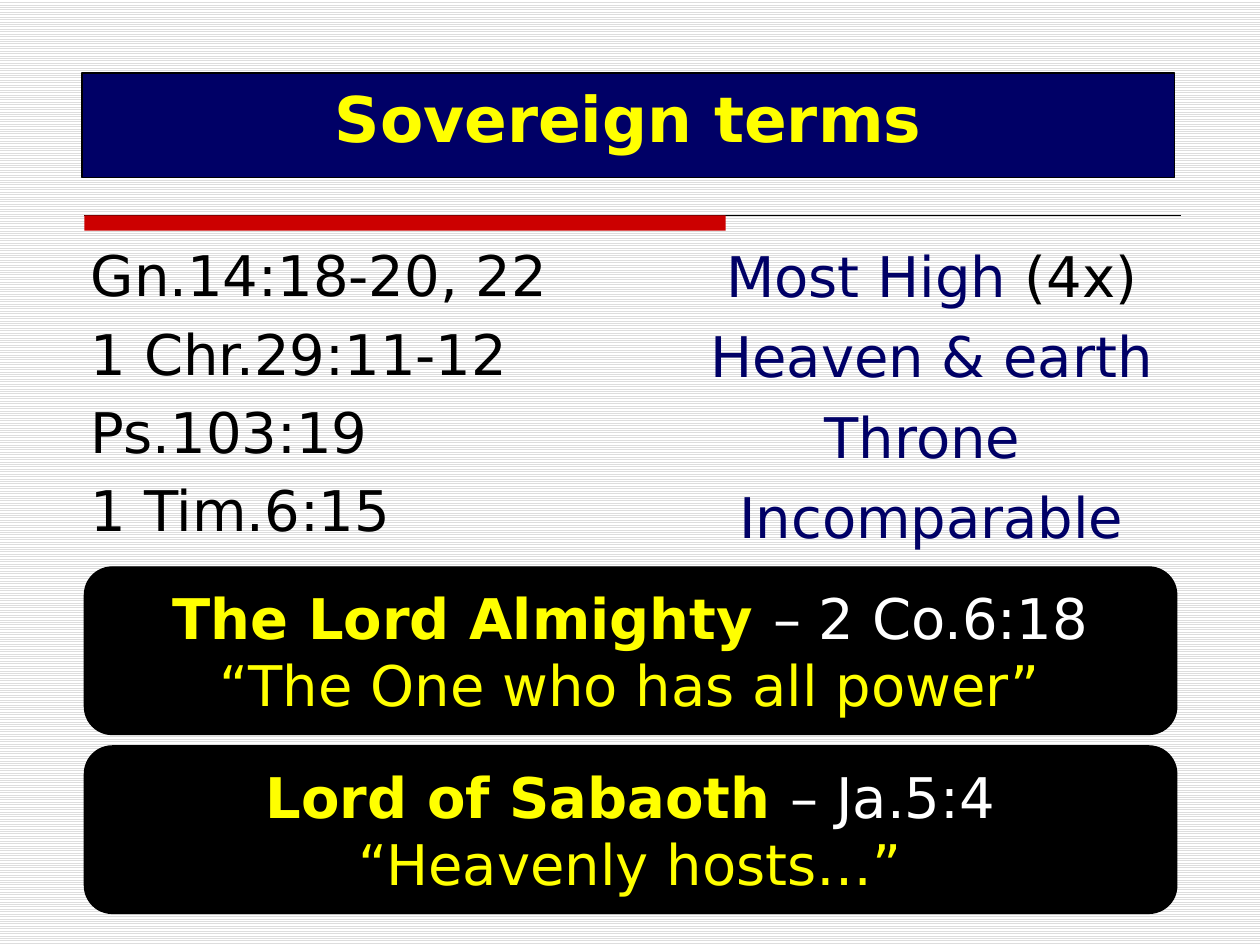
from pptx import Presentation
from pptx.dml.color import RGBColor
from pptx.enum.dml import MSO_PATTERN
from pptx.enum.shapes import MSO_CONNECTOR, MSO_SHAPE
from pptx.enum.text import MSO_ANCHOR, MSO_AUTO_SIZE, PP_ALIGN
from pptx.oxml.ns import qn
from pptx.util import Inches, Pt
from lxml import etree

COLORS = {
    "navy": "000066", "yellow": "FFFF00", "black": "000000",
    "white": "FFFFFF", "red": "CC0000", "stripe": "DDDDDD",
}


def color(name):
    return RGBColor.from_string(COLORS[name])


class SlideBuilder:
    """Holds the text style and the slide being built."""

    font_name = "DejaVu Sans"
    text_size = 32

    def __init__(self, slide):
        self.slide = slide

    def background(self, stripe, ground):
        fill = self.slide.background.fill
        fill.patterned()
        fill.pattern = MSO_PATTERN.LIGHT_HORIZONTAL
        fill.fore_color.rgb = color(stripe)
        fill.back_color.rgb = color(ground)

    def place(self, shape, box):
        for side, value in zip(("left", "top", "width", "height"), box):
            setattr(shape, side, Inches(value))

    def paint(self, shape, fill, outline=None):
        shape.fill.solid()
        shape.fill.fore_color.rgb = color(fill)
        if outline:
            shape.line.color.rgb = color(outline)
            shape.line.width = Pt(0.75)
        else:
            shape.line.fill.background()

    def set_text(self, frame, paragraphs, align, **frame_format):
        """Each paragraph is a list of (text, colour, font settings)."""
        frame_format = {"auto_size": MSO_AUTO_SIZE.NONE, "word_wrap": True,
                        **frame_format}
        for name, value in frame_format.items():
            setattr(frame, name, value)
        for index, runs in enumerate(paragraphs):
            paragraph = frame.add_paragraph() if index else frame.paragraphs[0]
            paragraph.alignment = align
            for text, ink, settings in runs:
                run = paragraph.add_run()
                run.text = text
                run.font.color.rgb = color(ink)
                font_format = {"name": self.font_name,
                               "size": Pt(self.text_size), **settings}
                for name, value in font_format.items():
                    setattr(run.font, name, value)

    def title(self, text, box):
        title = self.slide.shapes.title
        self.place(title, box)
        self.paint(title, "navy", "black")
        runs = [(text, "yellow", {"size": Pt(36), "bold": True})]
        self.set_text(title.text_frame, [runs], PP_ALIGN.CENTER,
                      vertical_anchor=MSO_ANCHOR.TOP)

    def body(self, lines, box):
        body = self.slide.placeholders[1]
        self.place(body, box)
        self.set_text(body.text_frame, [[(line, "black", {})] for line in lines],
                      PP_ALIGN.LEFT, vertical_anchor=MSO_ANCHOR.TOP)
        for paragraph in body.text_frame.paragraphs:
            properties = paragraph._p.get_or_add_pPr()
            properties.set("marL", str(Inches(0.51)))
            properties.set("indent", str(Inches(-0.51)))
            etree.SubElement(properties, qn("a:buNone"))

    def label(self, runs, box):
        label = self.slide.shapes.add_textbox(*map(Inches, box))
        self.set_text(label.text_frame, [runs], PP_ALIGN.CENTER,
                      word_wrap=False, vertical_anchor=MSO_ANCHOR.MIDDLE)

    def shape(self, kind, box, fill, outline=None):
        shape = self.slide.shapes.add_shape(kind, *map(Inches, box))
        shape.shadow.inherit = False
        self.paint(shape, fill, outline)
        return shape

    def panel(self, name, reference, meaning, box):
        panel = self.shape(MSO_SHAPE.ROUNDED_RECTANGLE, box, "black", "black")
        paragraphs = [
            [(name, "yellow", {"bold": True}), (reference, "white", {})],
            [(meaning, "yellow", {})],
        ]
        self.set_text(panel.text_frame, paragraphs, PP_ALIGN.CENTER,
                      vertical_anchor=MSO_ANCHOR.MIDDLE)

    def rule(self, left, right, top):
        rule = self.slide.shapes.add_connector(
            MSO_CONNECTOR.STRAIGHT, *map(Inches, (left, top, right, top)))
        rule.line.color.rgb = color("black")
        rule.line.width = Pt(0.75)
        etree.SubElement(rule._element.spPr, qn("a:effectLst"))


def main():
    presentation = Presentation()
    presentation.slide_width = Inches(10)
    presentation.slide_height = Inches(7.5)
    layout = presentation.slide_layouts[1]
    builder = SlideBuilder(presentation.slides.add_slide(layout))
    builder.background("stripe", "white")

    # Title and the divider under it
    builder.title("Sovereign terms", (0.65, 0.58, 8.67, 0.83))
    builder.rule(0.67, 9.37, 1.71)
    builder.shape(MSO_SHAPE.RECTANGLE, (0.67, 1.71, 5.09, 0.12), "red")

    # Scripture references
    references = ["Gn.14:18-20, 22", "1 Chr.29:11-12", "Ps.103:19", "1 Tim.6:15"]
    builder.body(references, (0.62, 1.86, 8.75, 5.39))

    # Term for each reference
    terms = [
        [("Most High ", "navy", {}), ("(4x)", "black", {})],
        [("Heaven & earth", "navy", {})],
        [("Throne", "navy", {}), (" ", "black", {"size": Pt(30), "bold": True})],
        [("Incomparable", "navy", {})],
    ]
    for row, term in enumerate(terms):
        builder.label(term, (5.48, 1.93 + 0.64 * row, 3.83, 0.5))

    # Names of the Lord
    names = [
        ("The Lord Almighty ", "– 2 Co.6:18", "“The One who has all power”"),
        ("Lord of Sabaoth ", "– Ja.5:4", "“Heavenly hosts…”"),
    ]
    for row, name in enumerate(names):
        builder.panel(*name, (0.67, 4.5 + 1.42 * row, 8.67, 1.33))

    presentation.save("out.pptx")


if __name__ == "__main__":
    main()
